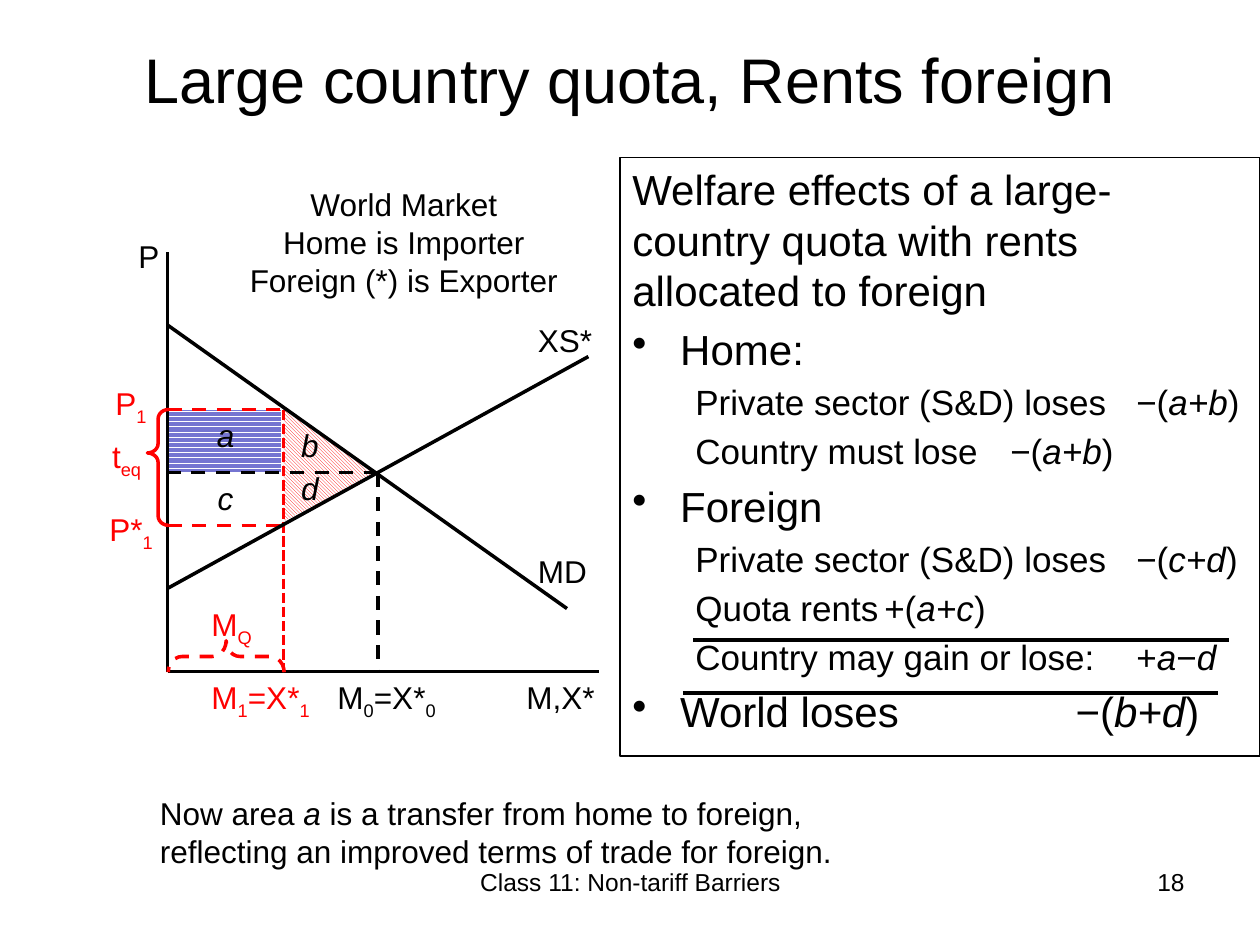
"""Build the slide on the welfare effects of a large-country quota with foreign rents."""
from lxml.etree import SubElement
from pptx import Presentation
from pptx.dml.color import RGBColor
from pptx.enum.dml import MSO_LINE as DASH, MSO_PATTERN as PATTERN
from pptx.enum.shapes import MSO_CONNECTOR as CONNECTOR, MSO_SHAPE as SHAPE
from pptx.enum.text import MSO_ANCHOR as ANCHOR, PP_ALIGN as ALIGN
from pptx.oxml.ns import qn
from pptx.util import Inches, Pt

BLACK, RED, BLUE, WHITE = "000000", "FF0000", "7575D1", "FFFFFF"
AXIS, QUOTA, FREE = 1.33, 2.25, 3
BASE, PRICE_HOME, PRICE_FREE, PRICE_FOREIGN = 5.33, 3.25, 3.75, 4.17
LEFT, CENTER, RIGHT = ALIGN.LEFT, ALIGN.CENTER, ALIGN.RIGHT


def add_runs(paragraph, runs, size, color):
    for text, style in runs:
        run = paragraph.add_run()
        run.text = text
        run.font.name = "Arial"
        run.font.size = Pt(size)
        run.font.italic = style == "italic"
        run.font.color.rgb = RGBColor.from_string(color)
        if style == "sub":
            run.font._element.set("baseline", "-25000")


def add_text(box, lines, size=18, color=BLACK, align=LEFT, anchor=ANCHOR.TOP):
    frame = slide.shapes.add_textbox(*map(Inches, box)).text_frame
    frame.word_wrap = True
    frame.vertical_anchor = anchor
    for index, runs in enumerate(lines):
        paragraph = frame.add_paragraph() if index else frame.paragraphs[0]
        paragraph.alignment = align
        add_runs(paragraph, runs, size, color)


presentation = Presentation()
presentation.slide_width, presentation.slide_height = Inches(10), Inches(7.5)
slide = presentation.slides.add_slide(presentation.slide_layouts[6])

areas = [
    (SHAPE.RECTANGLE, (AXIS, PRICE_HOME, 0.9, 0.5), PATTERN.DARK_HORIZONTAL, BLUE, False),
    (SHAPE.RIGHT_TRIANGLE, (QUOTA, PRICE_FREE, 0.75, 0.39), PATTERN.DARK_DOWNWARD_DIAGONAL, RED, True),
    (SHAPE.RIGHT_TRIANGLE, (QUOTA, PRICE_HOME, 0.74, 0.5), PATTERN.DARK_DOWNWARD_DIAGONAL, RED, False),
]
for kind, box, pattern, color, flipped in areas:
    shape = slide.shapes.add_shape(kind, *map(Inches, box))
    shape.shadow.inherit = False
    shape.line.fill.background()
    shape.fill.patterned()
    shape.fill.pattern = pattern
    shape.fill.fore_color.rgb = RGBColor.from_string(color)
    shape.fill.back_color.rgb = RGBColor.from_string(WHITE)
    if flipped:
        shape._element.spPr.xfrm.set("flipV", "1")

welfare = slide.shapes.add_shape(SHAPE.RECTANGLE, *map(Inches, (4.92, 1.25, 5.08, 4.75)))
welfare.shadow.inherit = False
welfare.fill.background()
welfare.line.color.rgb = RGBColor.from_string(BLACK)
welfare.line.width = Pt(0.75)
welfare.text_frame.word_wrap = True
welfare.text_frame.vertical_anchor = ANCHOR.TOP
welfare_lines = [
    ("intro", "Welfare effects of a large-country quota with rents allocated to foreign", []),
    ("bullet", "Home:", []),
    ("detail", "Private sector (S&D) loses", [("−(", ""), ("a+b", "italic"), (")", "")]),
    ("detail", "Country must lose", [("−(", ""), ("a+b", "italic"), (")", "")]),
    ("bullet", "Foreign", []),
    ("detail", "Private sector (S&D) loses", [("−(", ""), ("c+d", "italic"), (")", "")]),
    ("detail", "Quota rents", [("+(", ""), ("a+c", "italic"), (")", "")]),
    ("detail", "Country may gain or lose:", [("+", ""), ("a", "italic"), ("−", ""), ("d", "italic")]),
    ("bullet", "World loses", [("−(", ""), ("b+d", "italic"), (")", "")]),
]
layouts = {"intro": (24, 0, 0, 0), "bullet": (24, 0.38, -0.38, 4.5), "detail": (20, 0, 0.5, 4.78)}
for index, (kind, label, effect) in enumerate(welfare_lines):
    size, margin, indent, stop = layouts[kind]
    frame = welfare.text_frame
    paragraph = frame.add_paragraph() if index else frame.paragraphs[0]
    paragraph.alignment = LEFT
    paragraph.level = 1 if kind == "detail" else 0
    paragraph.space_before = Pt(size * 0.2)
    properties = paragraph._p.get_or_add_pPr()
    properties.set("marL", str(Inches(margin)))
    properties.set("indent", str(Inches(indent)))
    if kind == "bullet":
        SubElement(properties, qn("a:buChar"), char="•")
    else:
        SubElement(properties, qn("a:buNone"))
    if effect:
        tabs = SubElement(properties, qn("a:tabLst"))
        SubElement(tabs, qn("a:tab"), pos=str(Inches(stop)), algn="r")
        label += "\t"
    add_runs(paragraph, [(label, "")] + effect, size, BLACK)

lines = [
    (AXIS, BASE, 4.75, BASE, BLACK, None),
    (AXIS, BASE, AXIS, 2, BLACK, None),
    (FREE, PRICE_FREE, FREE, BASE, BLACK, DASH.DASH),
    (QUOTA, PRICE_HOME, QUOTA, BASE, RED, DASH.SQUARE_DOT),
    (AXIS, PRICE_FOREIGN, QUOTA, PRICE_FOREIGN, RED, DASH.DASH),
    (AXIS, PRICE_HOME, QUOTA, PRICE_HOME, RED, DASH.DASH),
    (AXIS, 4.67, 4.67, 2.83, BLACK, None),
    (4.5, 4.83, AXIS, 2.58, BLACK, None),
    (FREE, PRICE_FREE, AXIS, PRICE_FREE, BLACK, DASH.DASH),
    (5.5, 5.08, 9.75, 5.08, BLACK, None),
    (5.42, 5.5, 9.67, 5.5, BLACK, None),
]
for *ends, color, dash in lines:
    connector = slide.shapes.add_connector(CONNECTOR.STRAIGHT, *map(Inches, ends))
    connector.line.color.rgb = RGBColor.from_string(color)
    connector.line.width = Pt(2)
    if dash:
        connector.line.dash_style = dash
    SubElement(connector._element.spPr, qn("a:effectLst"))

braces = [
    ((1.17, PRICE_HOME, 0.17, 0.92), 0, 0.625, None),
    ((1.67, 4.75, 0.25, 0.92), 90, 0.5, DASH.DASH),
]
for box, rotation, point, dash in braces:
    brace = slide.shapes.add_shape(SHAPE.LEFT_BRACE, *map(Inches, box))
    brace.shadow.inherit = False
    brace.fill.background()
    brace.line.color.rgb = RGBColor.from_string(RED)
    brace.line.width = Pt(2)
    if dash:
        brace.line.dash_style = dash
    brace.adjustments[0], brace.adjustments[1] = 0.44, point
    brace.rotation = rotation
    brace._element.spPr.xfrm.set("flipV", "1")

labels = [
    (1, 1.83, 0.75, BLACK, LEFT, [("P", "")]),
    (4.17, 4.33, 0.75, BLACK, LEFT, [("MD", "")]),
    (4.17, 2.5, 0.75, BLACK, LEFT, [("XS*", "")]),
    (4.08, BASE, 0.75, BLACK, LEFT, [("M,X*", "")]),
    (2.58, BASE, 1.08, BLACK, LEFT, [("M", ""), ("0", "sub"), ("=X*", ""), ("0", "sub")]),
    (1.58, BASE, 1.08, RED, LEFT, [("M", ""), ("1", "sub"), ("=X*", ""), ("1", "sub")]),
    (1.58, 4.75, 1, RED, LEFT, [("M", ""), ("Q", "sub")]),
    (0.75, 3, 0.58, RED, CENTER, [("P", ""), ("1", "sub")]),
    (0.75, 4, 0.58, RED, CENTER, [("P*", ""), ("1", "sub")]),
    (0.67, 3.42, 0.67, RED, CENTER, [("t", ""), ("eq", "sub")]),
    (1.58, 3.25, 0.42, BLACK, CENTER, [("a", "italic")]),
    (2.25, 3.33, 0.42, BLACK, CENTER, [("b", "italic")]),
    (1.58, 3.75, 0.42, BLACK, CENTER, [("c", "italic")]),
    (2.25, 3.67, 0.42, BLACK, CENTER, [("d", "italic")]),
]
for left, top, width, color, align, runs in labels:
    add_text((left, top, width, 0.4), [runs], color=color, align=align)

market = ["World Market", "Home is Importer", "Foreign (*) is Exporter"]
add_text((1.58, 1.42, 3.25, 1.01), [[(text, "")] for text in market], align=CENTER)
add_text((0.5, 0, 9, 1.25), [[("Large country quota, Rents foreign", "")]], 36, align=CENTER, anchor=ANCHOR.MIDDLE)
transfer = " is a transfer from home to foreign, reflecting an improved terms of trade for foreign."
add_text((1.17, 6.25, 6.08, 0.71), [[("Now area ", ""), ("a", "italic"), (transfer, "")]])
add_text((3.42, 6.83, 3.17, 0.52), [[("Class 11: Non-tariff Barriers", "")]], 14, align=CENTER)
add_text((7.17, 6.83, 2.33, 0.52), [[("18", "")]], 14, align=RIGHT)

presentation.save("out.pptx")
